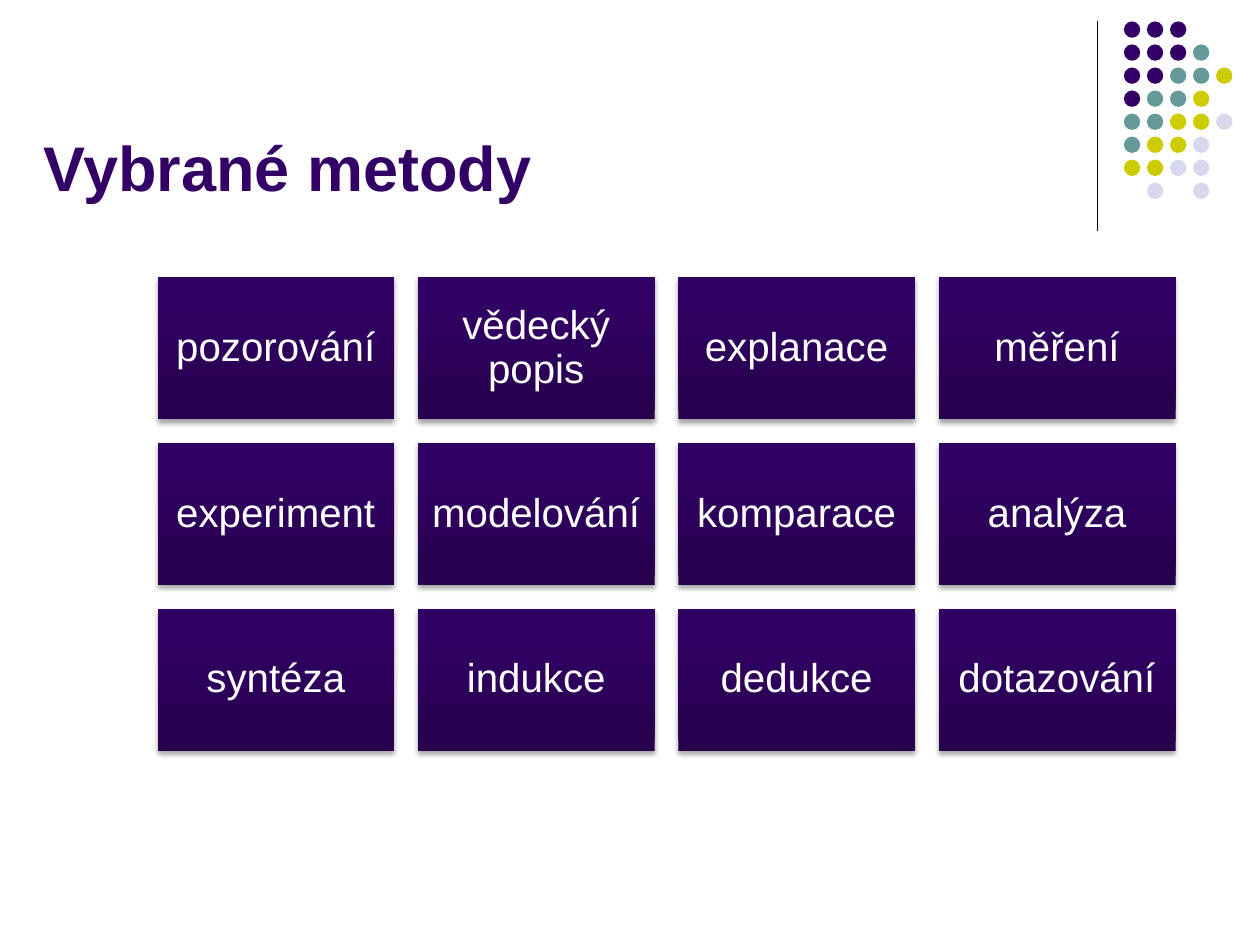
import copy
import dataclasses

import lxml.etree
import pptx
import pptx.dml.color
import pptx.enum.shapes
import pptx.enum.text
import pptx.oxml
import pptx.oxml.ns
import pptx.util

Inches = pptx.util.Inches
Pt = pptx.util.Pt
RGB = pptx.dml.color.RGBColor.from_string
qn = pptx.oxml.ns.qn
SHAPES = pptx.enum.shapes.MSO_SHAPE


@dataclasses.dataclass(frozen=True)
class Theme:
    font: str = "Arial"
    title_size: int = 36
    method_size: int = 23
    title: str = "330066"
    method_text: str = "FFFFFF"
    rule: str = "000000"
    tile_stops: tuple = ((0, "26004C"), (0.8, "310063"), (1, "320063"))
    dots: tuple = (("P", "330066"), ("T", "669999"), ("Y", "CCCC00"), ("L", "D8D8EC"))


TILE_SHADOW = (
    '<a:effectLst xmlns:a="http://schemas.openxmlformats.org/drawingml/2006/main">'
    '<a:outerShdw blurRad="39370" dist="22860" dir="5400000" rotWithShape="0">'
    '<a:srgbClr val="000000"><a:alpha val="35000"/></a:srgbClr>'
    '</a:outerShdw></a:effectLst>'
)


class SlideBuilder:
    def __init__(self, slide, theme):
        self.slide = slide
        self.theme = theme

    def set_text(self, frame, text, size, color, bold=False):
        frame.word_wrap = True
        paragraph = frame.paragraphs[0]
        paragraph.text = text
        paragraph.font.name = self.theme.font
        paragraph.font.size = Pt(size)
        paragraph.font.bold = bold
        paragraph.font.color.rgb = RGB(color)
        return paragraph

    def title(self, text, left, top, width, height):
        heading = self.slide.shapes.add_textbox(
            Inches(left), Inches(top), Inches(width), Inches(height))
        heading.text_frame.vertical_anchor = pptx.enum.text.MSO_ANCHOR.BOTTOM
        self.set_text(heading.text_frame, text, self.theme.title_size, self.theme.title, True)

    def rule(self, x, top, bottom):
        rule = self.slide.shapes.add_connector(
            pptx.enum.shapes.MSO_CONNECTOR.STRAIGHT,
            Inches(x), Inches(top), Inches(x), Inches(bottom))
        rule.line.color.rgb = RGB(self.theme.rule)
        rule.line.width = Pt(0.75)
        lxml.etree.SubElement(rule._element.spPr, qn("a:effectLst"))

    def dot(self, left, top, size, color):
        dot = self.slide.shapes.add_shape(
            SHAPES.OVAL, Inches(left), Inches(top), Inches(size), Inches(size))
        dot.shadow.inherit = False
        dot.fill.solid()
        dot.fill.fore_color.rgb = RGB(color)
        dot.line.fill.background()

    def tile(self, text, left, top, width, height):
        tile = self.slide.shapes.add_shape(
            SHAPES.RECTANGLE, Inches(left), Inches(top), Inches(width), Inches(height))
        tile.fill.gradient()
        tile.fill.gradient_angle = 90
        stop_list = tile._element.spPr.find(".//" + qn("a:gsLst"))
        stop_list.append(copy.deepcopy(stop_list[-1]))
        for stop, (position, color) in zip(tile.fill.gradient_stops, self.theme.tile_stops):
            stop.position = position
            stop.color.rgb = RGB(color)
        tile.line.fill.background()
        tile._element.spPr.append(pptx.oxml.parse_xml(TILE_SHADOW))

        frame = tile.text_frame
        frame.margin_left = frame.margin_right = Inches(0.1)
        frame.margin_top = frame.margin_bottom = Inches(0.1)
        frame.vertical_anchor = pptx.enum.text.MSO_ANCHOR.MIDDLE
        paragraph = self.set_text(frame, text, self.theme.method_size, self.theme.method_text)
        paragraph.alignment = pptx.enum.text.PP_ALIGN.CENTER
        paragraph.line_spacing = 0.9


DOT_ROWS = ("PPP", "PPPT", "PPTTY", "PTTY", "TTYYL", "TYYL", "YYLL", " L L")
METHODS = (
    ("pozorování", "vědecký popis", "explanace", "měření"),
    ("experiment", "modelování", "komparace", "analýza"),
    ("syntéza", "indukce", "dedukce", "dotazování"),
)


def main():
    presentation = pptx.Presentation()
    presentation.slide_width = Inches(10)
    presentation.slide_height = Inches(7.5)
    slide = presentation.slides.add_slide(presentation.slide_layouts[6])
    theme = Theme()
    builder = SlideBuilder(slide, theme)

    builder.rule(8.71, 0.17, 1.83)
    dot_colors = dict(theme.dots)
    dot_pitch = 1.28 / 7
    for row, dots in enumerate(DOT_ROWS):
        for column, kind in enumerate(dots):
            if kind in dot_colors:
                builder.dot(8.92 + column * dot_pitch, 0.17 + row * dot_pitch,
                            0.13, dot_colors[kind])

    builder.title("Vybrané metody", 0.25, 0.25, 8.42, 1.42)

    column_pitch = 6.2 / 3
    row_pitch = 2.63 / 2
    for row, methods in enumerate(METHODS):
        for column, method in enumerate(methods):
            builder.tile(method, 1.25 + column * column_pitch,
                         2.2 + row * row_pitch, 1.88, 1.13)

    presentation.save("out.pptx")


if __name__ == "__main__":
    main()
